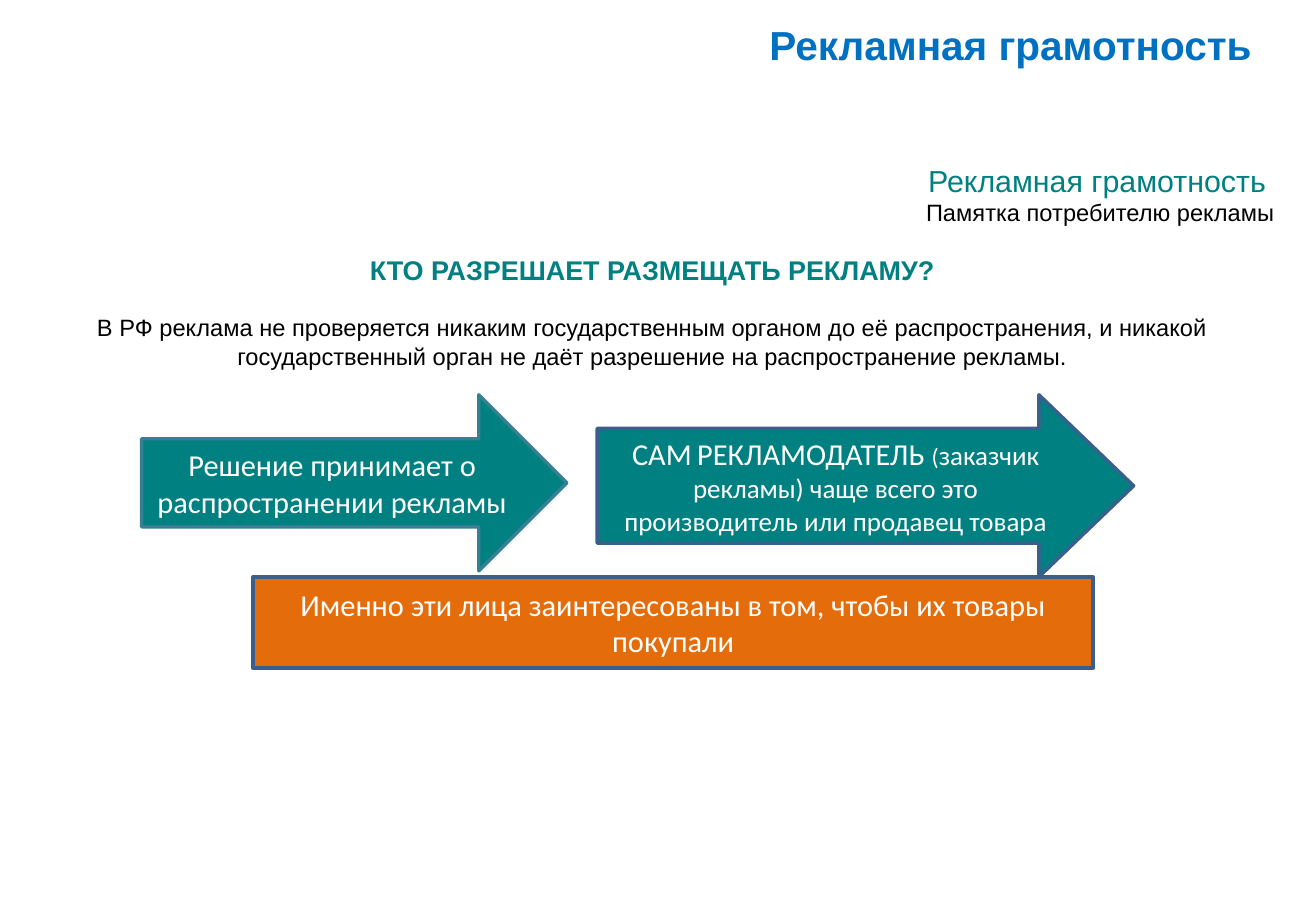
from dataclasses import dataclass

from pptx import Presentation
from pptx.dml.color import RGBColor
from pptx.enum.shapes import MSO_SHAPE
from pptx.enum.text import MSO_ANCHOR, PP_ALIGN
from pptx.util import Emu, Pt

PX = 7620  # EMU per px, 120 px to the inch


@dataclass(frozen=True)
class Theme:
    heading_font: str = "Arial"
    shape_font: str = "Calibri"
    blue: str = "0070C0"
    teal: str = "008080"
    orange: str = "E46C0A"
    black: str = "000000"
    white: str = "FFFFFF"
    teal_line: str = "377F92"
    blue_line: str = "3A5F8C"
    title: int = 24
    large: int = 18
    medium: int = 16
    small: int = 14
    line: int = 2


T = Theme()


@dataclass(frozen=True)
class Box:
    x: int
    y: int
    w: int
    h: int

    def emu(self) -> tuple:
        return tuple(Emu(v * PX) for v in (self.x, self.y, self.w, self.h))


@dataclass(frozen=True)
class Block:
    kind: MSO_SHAPE
    box: Box
    fill: str
    line: str
    runs: tuple  # (text, size) pairs
    adjust: tuple = ()


def rgb(value: str) -> RGBColor:
    return RGBColor.from_string(value)


def add_text(p, text: str, *, size: int, color: str, font: str = T.heading_font,
             bold: bool = False, align: PP_ALIGN = PP_ALIGN.LEFT, before: int = 0) -> None:
    """Append a formatted run to paragraph p."""
    p.alignment = align
    p.space_before = Pt(before)
    r = p.add_run()
    r.text = text
    r.font.name = font
    r.font.size = Pt(size)
    r.font.bold = bold
    r.font.color.rgb = rgb(color)


def add_text_box(s, box: Box, paragraphs: tuple) -> None:
    tf = s.shapes.add_textbox(*box.emu()).text_frame
    tf.word_wrap = True
    tf.margin_left = tf.margin_top = tf.margin_right = tf.margin_bottom = 0
    for i, (text, fmt) in enumerate(paragraphs):
        p = tf.add_paragraph() if i else tf.paragraphs[0]
        add_text(p, text, **fmt)


def add_block(s, block: Block) -> None:
    sp = s.shapes.add_shape(block.kind, *block.box.emu())
    sp.shadow.inherit = False
    for i, value in enumerate(block.adjust):
        sp.adjustments[i] = value
    sp.fill.solid()
    sp.fill.fore_color.rgb = rgb(block.fill)
    sp.line.color.rgb = rgb(block.line)
    sp.line.width = Pt(T.line)
    tf = sp.text_frame
    tf.word_wrap = True
    tf.vertical_anchor = MSO_ANCHOR.MIDDLE
    for text, size in block.runs:
        add_text(tf.paragraphs[0], text, size=size, color=T.white,
                 font=T.shape_font, align=PP_ALIGN.CENTER)


TITLE = (
    ("Рекламная грамотность", dict(size=T.title, color=T.blue, bold=True)),
)

BODY = (
    ("Рекламная грамотность ",
     dict(size=T.large, color=T.teal, align=PP_ALIGN.RIGHT)),
    ("Памятка потребителю рекламы",
     dict(size=T.small, color=T.black, align=PP_ALIGN.RIGHT)),
    ("КТО РАЗРЕШАЕТ РАЗМЕЩАТЬ РЕКЛАМУ?",
     dict(size=T.medium, color=T.teal, bold=True, align=PP_ALIGN.CENTER, before=16)),
    ("В РФ реклама не проверяется никаким государственным органом до её "
     "распространения, и никакой государственный орган не даёт разрешение "
     "на распространение рекламы.",
     dict(size=T.small, color=T.black, align=PP_ALIGN.CENTER, before=16)),
)

BLOCKS = (
    Block(MSO_SHAPE.RIGHT_ARROW, Box(140, 390, 420, 174), T.teal, T.teal_line,
          (("Решение принимает о распространении рекламы", T.large),)),
    Block(MSO_SHAPE.RIGHT_ARROW, Box(590, 390, 530, 180), T.teal, T.blue_line,
          (("САМ", T.large), (" ", T.small), ("РЕКЛАМОДАТЕЛЬ ", T.large), ("(", T.small),
           ("заказчик рекламы) чаще всего это производитель или продавец товара",
            T.medium)),
          (0.63, 0.52)),
    Block(MSO_SHAPE.RECTANGLE, Box(250, 570, 830, 90), T.orange, T.blue_line,
          (("Именно эти лица заинтересованы в том, чтобы их товары покупали", T.large),)),
)


def main() -> None:
    prs = Presentation()
    prs.slide_width, prs.slide_height = Emu(1300 * PX), Emu(900 * PX)
    s = prs.slides.add_slide(prs.slide_layouts[6])

    # Title and introduction
    add_text_box(s, Box(760, 20, 520, 48), TITLE)
    add_text_box(s, Box(30, 160, 1229, 686), BODY)

    # Arrows and conclusion
    for block in BLOCKS:
        add_block(s, block)

    prs.save("out.pptx")


if __name__ == "__main__":
    main()
